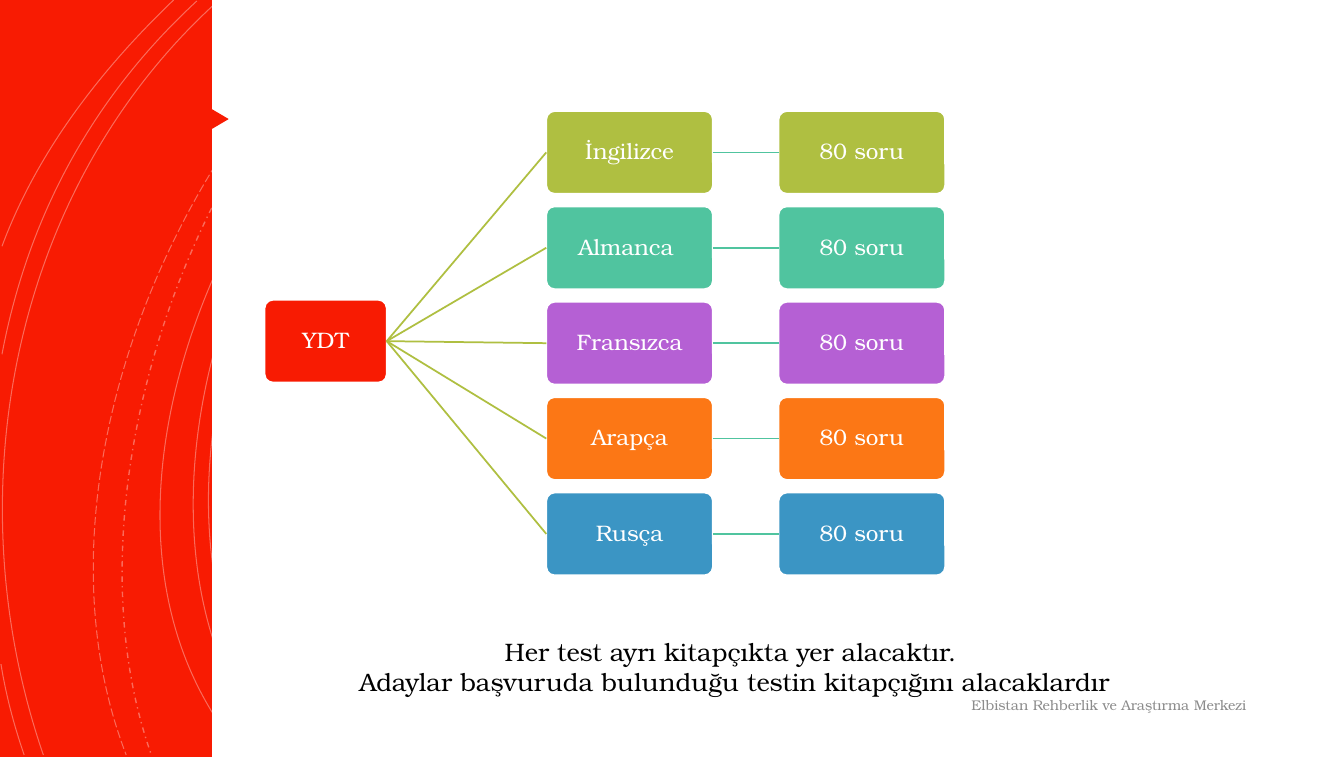
from dataclasses import dataclass

from lxml.etree import SubElement
from pptx import Presentation
from pptx.dml.color import RGBColor
from pptx.enum.dml import MSO_LINE_DASH_STYLE as Dash
from pptx.enum.shapes import MSO_CONNECTOR_TYPE as Connector, MSO_SHAPE as Shape
from pptx.enum.text import MSO_ANCHOR as Anchor, PP_ALIGN as Align
from pptx.oxml.ns import qn
from pptx.util import Inches, Pt


@dataclass(frozen=True)
class Theme:
    font: str = "TeX Gyre Bonum"
    red: str = "F81B02"
    white: str = "FFFFFF"
    black: str = "000000"
    gray: str = "8C8C8C"
    lime: str = "AFBF41"
    mint: str = "50C49F"
    box_size: int = 16
    note_size: int = 18
    footer_size: int = 10
    rule: float = 1.25
    curve_alpha: int = 35


THEME = Theme()

# Grid in inches
SLIDE_W, SLIDE_H = 13.31, 7.5
PANEL_W = 2.1
ROOT_COL, LANGUAGE_COL, COUNT_COL = 2.62, 5.41, 7.71
ROOT_W, BOX_W, BOX_H = 1.21, 1.65, 0.82
FIRST_ROW, ROW_PITCH, ROOT_ROW = 1.1, 0.945, 2.97

LANGUAGES = [
    ("İngilizce", THEME.lime),
    ("Almanca ", THEME.mint),
    ("Fransızca", "B560D4"),
    ("Arapça", "FC7715"),
    ("Rusça", "3B95C4"),
]

# Bezier control points, dash and width of each panel curve
PANEL_CURVES = [
    ([(4.64, 0), (2.43, 1.33), (1.09, 5.41), (2.93, 7.48)], Dash.SOLID, 0.75),
    ([(4.5, 0), (2.3, 1.38), (0.97, 5.33), (2.72, 7.48)], Dash.SOLID, 0.75),
    ([(4.26, 0), (2.17, 1.47), (0.53, 5.29), (2.41, 7.48)], Dash.SOLID, 0.75),
    ([(3.62, 0), (1.76, 1.66), (0.65, 5.09), (1.5, 7.48)], Dash.DASH_DOT, 1),
    ([(3.5, 0), (1.57, 1.69), (0.29, 4.99), (1.25, 7.48)], Dash.LONG_DASH, 0.75),
    ([(2.17, 0), (0.11, 1.85), (-0.46, 4.9), (0.43, 7.48)], Dash.SOLID, 0.75),
    ([(1.95, 0.01), (0.92, 0.96), (0.28, 2.14), (0.02, 3.51)], Dash.SOLID, 0.75),
    ([(0.01, 6.58), (0.06, 6.89), (0.14, 7.19), (0.24, 7.48)], Dash.SOLID, 0.75),
    ([(1.72, 0), (1, 0.69), (0.37, 1.5), (0.02, 2.44)], Dash.SOLID, 0.75),
]


def rgb(color):
    return RGBColor.from_string(color)


def write_text(frame, text, *, size, color, align=Align.CENTER,
               anchor=Anchor.TOP, spacing=None, inset=None):
    frame.word_wrap = True
    frame.vertical_anchor = anchor
    if inset is not None:
        frame.margin_left = frame.margin_right = Inches(inset)
        frame.margin_top = frame.margin_bottom = Inches(inset)
    frame.text = text
    for paragraph in frame.paragraphs:
        paragraph.alignment = align
        paragraph.line_spacing = spacing
        for run in paragraph.runs:
            run.font.name = THEME.font
            run.font.size = Pt(size)
            run.font.color.rgb = rgb(color)


def add_block(slide, kind, place, fill, outline=None):
    block = slide.shapes.add_shape(kind, *map(Inches, place))
    block.shadow.inherit = False
    block.fill.solid()
    block.fill.fore_color.rgb = rgb(fill)
    if outline:
        block.line.color.rgb = rgb(outline)
        block.line.width = Pt(THEME.rule)
    else:
        block.line.fill.background()
    return block


def add_box(slide, text, left, top, width, fill):
    box = add_block(slide, Shape.ROUNDED_RECTANGLE, (left, top, width, BOX_H),
                    fill, THEME.white)
    box.adjustments[0] = 0.1
    write_text(box.text_frame, text, size=THEME.box_size, color=THEME.white,
               anchor=Anchor.MIDDLE, spacing=0.9, inset=0.01)
    return box


def add_link(slide, source, target, color):
    link = slide.shapes.add_connector(Connector.STRAIGHT, 0, 0, 0, 0)
    link.begin_connect(source, 3)
    link.end_connect(target, 1)
    link.line.color.rgb = rgb(color)
    link.line.width = Pt(THEME.rule)
    SubElement(link._element.spPr, qn("a:effectLst"))


def add_label(slide, text, place, **text_format):
    label = slide.shapes.add_textbox(*map(Inches, place))
    write_text(label.text_frame, text, **text_format)


def add_curve(slide, controls, dash, width):
    start, *rest = [(Inches(x), Inches(y)) for x, y in controls]
    builder = slide.shapes.build_freeform(*start)
    builder.add_line_segments(rest, close=False)
    curve = builder.convert_to_shape()
    curve.shadow.inherit = False
    curve.fill.background()
    curve.line.color.rgb = rgb(THEME.white)
    curve.line.width = Pt(width)
    curve.line.dash_style = dash
    tint = curve.line._ln.find(".//" + qn("a:srgbClr"))
    SubElement(tint, qn("a:alpha"), val=str(THEME.curve_alpha * 1000))

    # Join the three straight segments into one Bezier segment
    outline = curve._element.spPr.find(".//" + qn("a:path"))
    segments = outline.findall(qn("a:lnTo"))
    bend = SubElement(outline, qn("a:cubicBezTo"))
    for segment in segments:
        bend.append(segment[0])
        outline.remove(segment)


def add_panel(slide):
    add_block(slide, Shape.RECTANGLE, (0, 0, SLIDE_W, SLIDE_H), THEME.red)
    for controls, dash, width in PANEL_CURVES:
        add_curve(slide, controls, dash, width)
    add_block(slide, Shape.RECTANGLE,
              (PANEL_W, 0, SLIDE_W - PANEL_W, SLIDE_H), THEME.white)
    pointer = add_block(slide, Shape.ISOSCELES_TRIANGLE,
                        (1.96, 1.04, 0.33, 0.28), THEME.red)
    pointer.rotation = 90


def add_test_tree(slide):
    exam = add_box(slide, "YDT", ROOT_COL, ROOT_ROW, ROOT_W, THEME.red)
    for row, (name, color) in enumerate(LANGUAGES):
        top = FIRST_ROW + row * ROW_PITCH
        language = add_box(slide, name, LANGUAGE_COL, top, BOX_W, color)
        count = add_box(slide, "80 soru", COUNT_COL, top, BOX_W, color)
        add_link(slide, exam, language, THEME.lime)
        add_link(slide, language, count, THEME.mint)


def main():
    deck = Presentation()
    deck.slide_width, deck.slide_height = Inches(SLIDE_W), Inches(SLIDE_H)
    slide = deck.slides.add_slide(deck.slide_layouts[6])

    # Decorated side panel and the white page beside it
    add_panel(slide)

    # Exam, its languages and their question counts
    add_test_tree(slide)

    # Note and footer
    add_label(slide, "Her test ayrı kitapçıkta yer alacaktır. \n"
              "Adaylar başvuruda bulunduğu testin kitapçığını alacaklardır",
              (2.44, 6.25, 9.67, 0.71), size=THEME.note_size, color=THEME.black)
    add_label(slide, "Elbistan Rehberlik ve Araştırma Merkezi",
              (0.88, 6.81, 11.56, 0.35), size=THEME.footer_size,
              color=THEME.gray, align=Align.RIGHT, anchor=Anchor.MIDDLE)

    deck.save("out.pptx")


if __name__ == "__main__":
    main()
